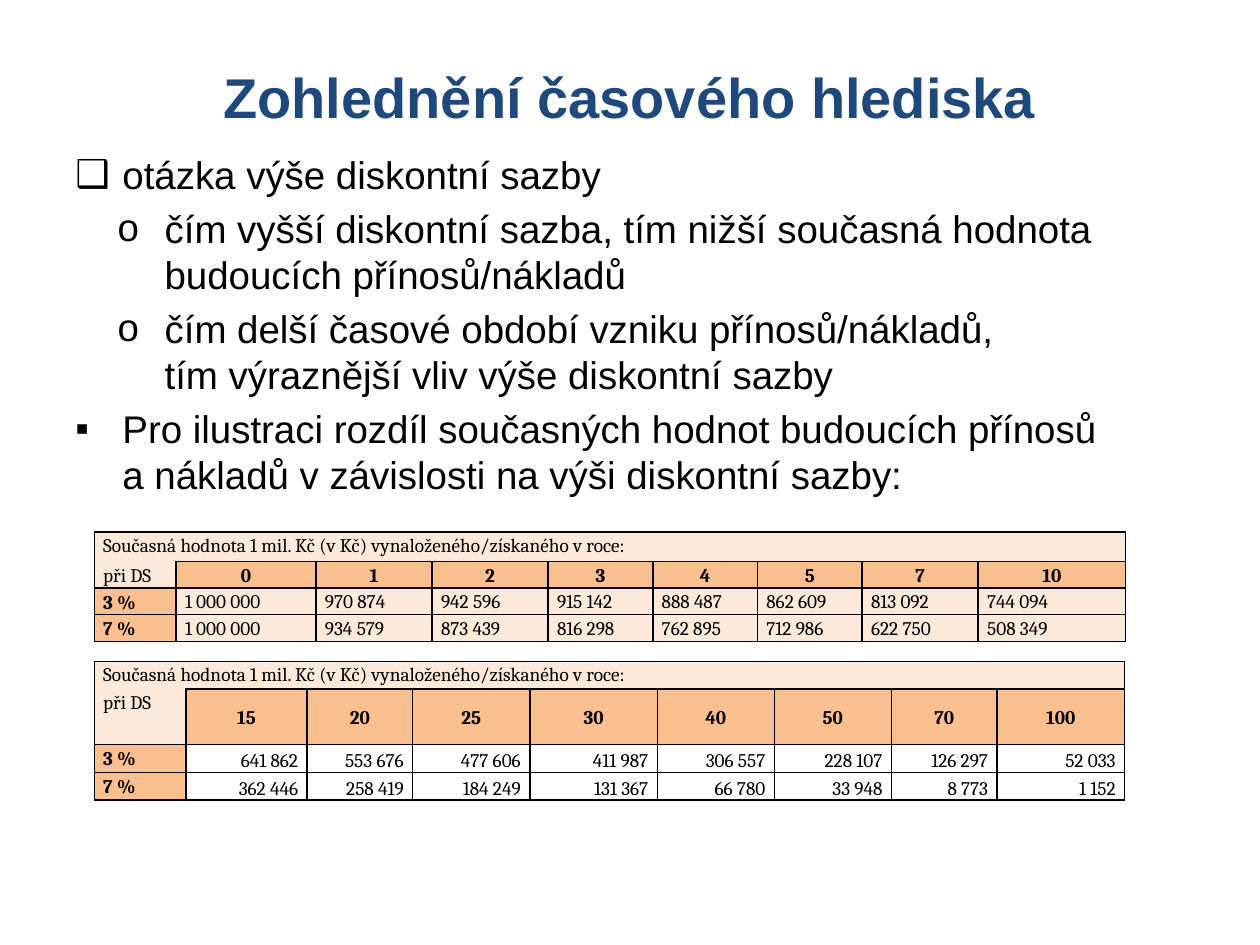
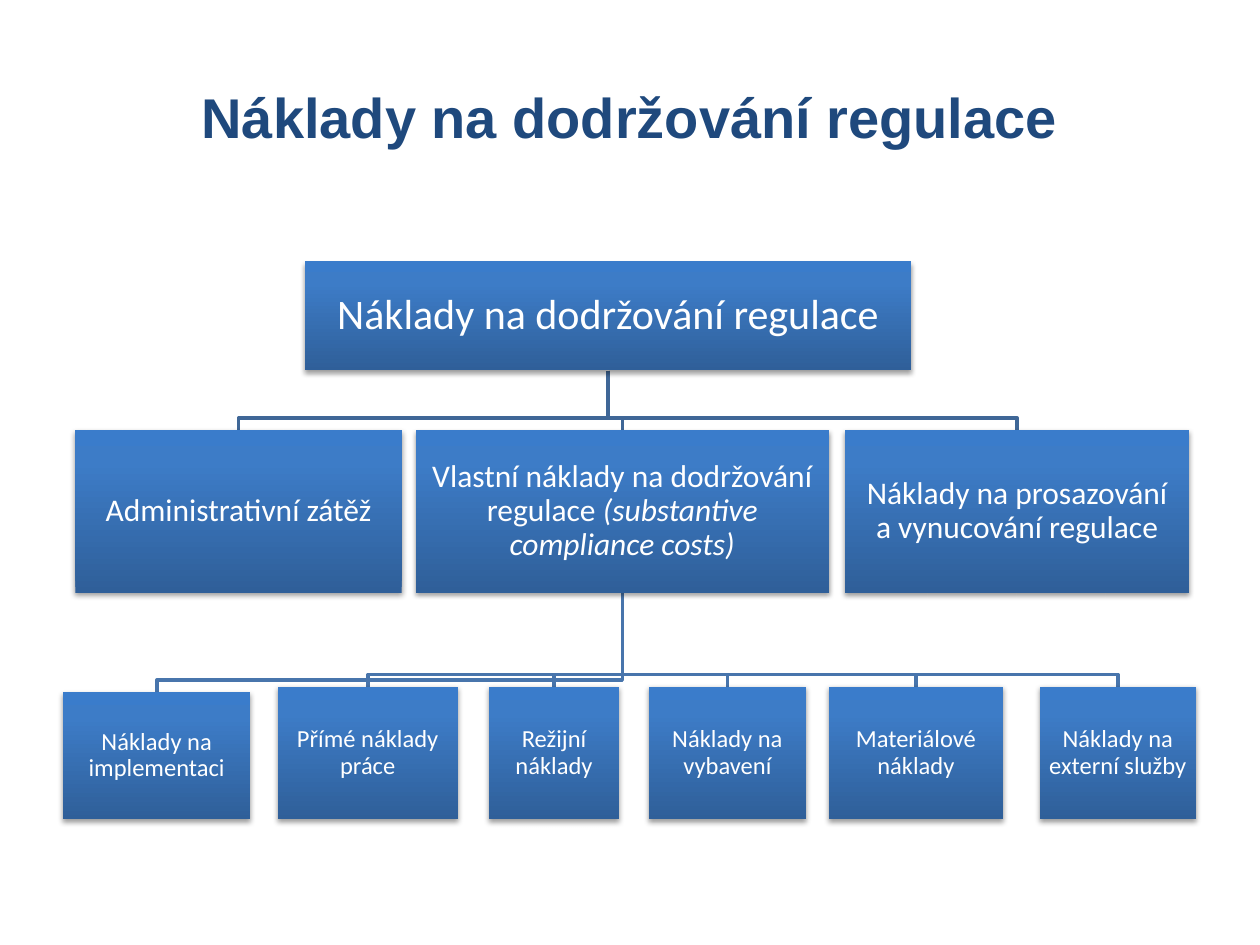
from dataclasses import dataclass

from lxml import etree
from pptx import Presentation
from pptx.dml.color import RGBColor
from pptx.enum.shapes import MSO_SHAPE
from pptx.enum.text import MSO_ANCHOR, PP_ALIGN
from pptx.oxml import parse_xml
from pptx.oxml.ns import nsdecls, qn
from pptx.util import Cm, Pt

RECT = MSO_SHAPE.RECTANGLE
TOP, MIDDLE, BOTTOM = MSO_ANCHOR.TOP, MSO_ANCHOR.MIDDLE, MSO_ANCHOR.BOTTOM
LEFT, CENTER, RIGHT = PP_ALIGN.LEFT, PP_ALIGN.CENTER, PP_ALIGN.RIGHT


@dataclass(frozen=True)
class Theme:
    heading_font: str = "Arial"
    table_font: str = "Cambria"
    chart_font: str = "Calibri"
    title: str = "1F497D"
    ink: str = "000000"
    on_box: str = "FFFFFF"
    cell: str = "FDE9D9"
    cell_head: str = "FABF8F"
    link_upper: str = "3F6797"
    link_lower: str = "4875AC"
    box_stops: tuple = ((0, "2F5F99"), (80, "3D7CC7"), (100, "3A7CCB"))
    title_size: int = 32
    body_size: int = 22
    table_size: int = 11


@dataclass(frozen=True)
class Node:
    text: str
    left: float
    width: float
    italic: str = ""
    drop: float = 0  # extra distance below the top of its row


THEME = Theme()

# Content; all lengths in centimetres
TIME_TITLE = "Zohlednění časového hlediska"
COST_TITLE = "Náklady na dodržování regulace"

BULLETS = [  # bullet, text indent, text
    ("❑", 0.95, "otázka výše diskontní sazby"),
    ("o", 1.8, "čím vyšší diskontní sazba, tím nižší současná hodnota "
               "budoucích přínosů/nákladů"),
    ("o", 1.8, "čím delší časové období vzniku přínosů/nákladů,\v"
               "tím výraznější vliv výše diskontní sazby"),
    ("▪", 0.95, "Pro ilustraci rozdíl současných hodnot budoucích přínosů\v"
                "a nákladů v závislosti na výši diskontní sazby:"),
]
HANGING = 0.95

TABLE_CAPTION = "Současná hodnota 1 mil. Kč (v Kč) vynaloženého/získaného v roce:"
TABLE_LEFT = 1.9
TABLES = [
    dict(
        top=10.72,
        cols=[1.65, 2.82, 2.34, 2.34, 2.11, 2.11, 2.11, 2.34, 2.97],
        rows=[0.6, 0.5, 0.5, 0.5],
        label_anchor=MIDDLE, value_anchor=TOP, value_align=LEFT, value_fill=THEME.cell,
        data=[
            ["při DS", "0", "1", "2", "3", "4", "5", "7", "10"],
            ["3 %", "1 000 000", "970 874", "942 596", "915 142",
             "888 487", "862 609", "813 092", "744 094"],
            ["7 %", "1 000 000", "934 579", "873 439", "816 298",
             "762 895", "712 986", "622 750", "508 349"],
        ],
    ),
    dict(
        top=13.33,
        cols=[1.85, 2.44, 2.13, 2.36, 2.57, 2.36, 2.36, 2.13, 2.57],
        rows=[0.56, 1.12, 0.56, 0.56],
        label_anchor=TOP, value_anchor=BOTTOM, value_align=RIGHT, value_fill=None,
        data=[
            ["při DS", "15", "20", "25", "30", "40", "50", "70", "100"],
            ["3 %", "641 862", "553 676", "477 606", "411 987",
             "306 557", "228 107", "126 297", "52 033"],
            ["7 %", "362 446", "258 419", "184 249", "131 367",
             "66 780", "33 948", "8 773", "1 152"],
        ],
    ),
]

LEVELS = [
    dict(top=5.26, height=2.21, size=24,
         nodes=[Node("Náklady na dodržování regulace", 6.15, 12.22)]),
    dict(top=8.67, height=3.28, size=18, nodes=[
        Node("Administrativní zátěž", 1.52, 6.58),
        Node("Vlastní náklady na dodržování regulace ", 8.38, 8.33,
             italic="(substantive compliance costs)"),
        Node("Náklady na prosazování\va vynucování regulace", 17.03, 6.95),
    ]),
    dict(top=13.84, height=2.68, size=14, nodes=[
        Node("Náklady na implementaci", 1.27, 3.78, drop=0.11),
        Node("Přímé náklady práce", 5.6, 3.63),
        Node("Režijní náklady", 9.86, 2.62),
        Node("Náklady na vybavení", 13.08, 3.17),
        Node("Materiálové náklady", 16.71, 3.51),
        Node("Náklady na externí služby", 20.96, 3.15),
    ]),
]
LINKS = [(0, 0, THEME.link_upper), (1, 1, THEME.link_lower)]  # parent level, node, colour
BEND_ABOVE_CHILD = 0.24


def style_runs(p, font, size, color, bold=False):
    for r in p.runs:
        r.font.name = font
        r.font.size = Pt(size)
        r.font.bold = bold
        r.font.color.rgb = RGBColor.from_string(color)


def add_title(s, text, height):
    sp = s.shapes.add_textbox(Cm(1.27), Cm(0.76), Cm(22.86), Cm(height))
    tf = sp.text_frame
    tf.word_wrap = True
    tf.vertical_anchor = MIDDLE
    p = tf.paragraphs[0]
    p.text = text
    p.alignment = CENTER
    style_runs(p, THEME.heading_font, THEME.title_size, THEME.title, bold=True)


def add_bullets(s):
    tf = s.shapes.add_textbox(Cm(1.27), Cm(2.92), Cm(22.86), Cm(7.6)).text_frame
    tf.word_wrap = True
    for i, (bullet, indent, text) in enumerate(BULLETS):
        p = tf.add_paragraph() if i else tf.paragraphs[0]
        p.text = text
        pPr = p._p.get_or_add_pPr()
        pPr.set("marL", str(Cm(indent)))
        pPr.set("indent", str(-Cm(HANGING)))
        etree.SubElement(pPr, qn("a:buFont")).set("typeface", THEME.heading_font)
        etree.SubElement(pPr, qn("a:buChar")).set("char", bullet)
        if i:
            p.space_before = Pt(0.2 * THEME.body_size)
        style_runs(p, THEME.heading_font, THEME.body_size, THEME.ink)


def set_borders(cell, sides):
    tcPr = cell._tc.get_or_add_tcPr()
    for i, side in enumerate(sides):
        tcPr.insert(i, parse_xml(
            f'<a:ln{side} {nsdecls("a")} w="{Pt(1)}"><a:solidFill>'
            f'<a:srgbClr val="{THEME.ink}"/></a:solidFill></a:ln{side}>'))


def fill_cell(cell, text, fill, sides, anchor=TOP, align=LEFT, bold=False):
    cell.margin_left = cell.margin_right = Cm(0.18)
    cell.margin_top = cell.margin_bottom = 0
    cell.vertical_anchor = anchor
    p = cell.text_frame.paragraphs[0]
    p.text = text
    p.alignment = align
    p.line_spacing = 1.15
    style_runs(p, THEME.table_font, THEME.table_size, THEME.ink, bold)
    if fill:
        cell.fill.solid()
        cell.fill.fore_color.rgb = RGBColor.from_string(fill)
    else:
        cell.fill.background()
    set_borders(cell, sides)


def add_value_table(s, spec):
    cols, rows = spec["cols"], spec["rows"]
    table = s.shapes.add_table(len(rows), len(cols), Cm(TABLE_LEFT), Cm(spec["top"]),
                               Cm(sum(cols)), Cm(sum(rows))).table
    table.first_row = table.horz_banding = False
    no_style = "{2D5ABB26-0587-4C30-8999-92F81FD0307C}"
    table._tbl.tblPr.find(qn("a:tableStyleId")).text = no_style
    for column, width in zip(table.columns, cols):
        column.width = Cm(width)
    for row, height in zip(table.rows, rows):
        row.height = Cm(height)

    table.cell(0, 0).merge(table.cell(0, len(cols) - 1))
    for c in range(len(cols)):
        fill_cell(table.cell(0, c), "" if c else TABLE_CAPTION, THEME.cell, "LRT")
    for r, values in enumerate(spec["data"], start=1):
        for c, text in enumerate(values):
            cell = table.cell(r, c)
            if r == 1 and c == 0:
                fill_cell(cell, text, THEME.cell, "LRB")
            elif r == 1:
                fill_cell(cell, text, THEME.cell_head, "LRTB", MIDDLE, CENTER, True)
            elif c == 0:
                fill_cell(cell, text, THEME.cell_head, "LRTB",
                          spec["label_anchor"], LEFT, True)
            else:
                fill_cell(cell, text, spec["value_fill"], "LRTB",
                          spec["value_anchor"], spec["value_align"])


def add_link(s, parent_level, parent, child_level, child, color):
    """Draw the bent line from the bottom of parent to the top of child."""
    x0, x1 = (node.left + node.width / 2 for node in (parent, child))
    y0 = parent_level["top"] + parent_level["height"]
    y1 = child_level["top"] + child.drop
    bend = y1 - BEND_ABOVE_CHILD
    builder = s.shapes.build_freeform(Cm(x0), Cm(y0))
    builder.add_line_segments([(Cm(x), Cm(y)) for x, y in
                               ((x0, bend), (x1, bend), (x1, y1))], close=False)
    sp = builder.convert_to_shape()
    sp.shadow.inherit = False
    sp.fill.background()
    sp.line.color.rgb = RGBColor.from_string(color)
    sp.line.width = Pt(2)


def paint_box(sp):
    """Give the box its upward gradient and soft shadow."""
    sp.line.fill.background()
    stops = "".join(f'<a:gs pos="{pos * 1000}"><a:srgbClr val="{color}"/></a:gs>'
                    for pos, color in THEME.box_stops)
    gradient = parse_xml(f'<a:gradFill {nsdecls("a")} rotWithShape="1"><a:gsLst>{stops}'
                         '</a:gsLst><a:lin ang="16200000" scaled="0"/></a:gradFill>')
    shadow = parse_xml(
        f'<a:effectLst {nsdecls("a")}><a:outerShdw blurRad="{Pt(3.1)}" dist="{Pt(1.6)}" '
        'dir="5400000" rotWithShape="0"><a:srgbClr val="000000"><a:alpha val="38000"/>'
        '</a:srgbClr></a:outerShdw></a:effectLst>')
    spPr = sp._element.spPr
    spPr.find(qn("a:prstGeom")).addnext(gradient)
    spPr.find(qn("a:ln")).addnext(shadow)


def add_box(s, level, node):
    sp = s.shapes.add_shape(RECT, Cm(node.left), Cm(level["top"] + node.drop),
                            Cm(node.width), Cm(level["height"] - node.drop))
    paint_box(sp)
    tf = sp.text_frame
    tf.word_wrap = True
    tf.vertical_anchor = MIDDLE
    tf.margin_left = tf.margin_right = tf.margin_top = tf.margin_bottom = Cm(0.03)
    p = tf.paragraphs[0]
    p.text = node.text
    p.alignment = CENTER
    p.line_spacing = 0.9
    if node.italic:
        r = p.add_run()
        r.text = node.italic
        r.font.italic = True
    style_runs(p, THEME.chart_font, level["size"], THEME.on_box)


def build_time_slide(s):
    add_title(s, TIME_TITLE, 2.36)
    add_bullets(s)
    for spec in TABLES:
        add_value_table(s, spec)


def build_cost_slide(s):
    add_title(s, COST_TITLE, 3.18)
    for depth, index, color in LINKS:
        parent_level, child_level = LEVELS[depth], LEVELS[depth + 1]
        for child in child_level["nodes"]:
            add_link(s, parent_level, parent_level["nodes"][index],
                     child_level, child, color)
    for level in LEVELS:
        for node in level["nodes"]:
            add_box(s, level, node)


def main():
    prs = Presentation()
    prs.slide_width, prs.slide_height = Cm(25.4), Cm(19.05)
    blank = prs.slide_layouts[6]
    for build in (build_time_slide, build_cost_slide):
        build(prs.slides.add_slide(blank))
    prs.save("out.pptx")


if __name__ == "__main__":
    main()
